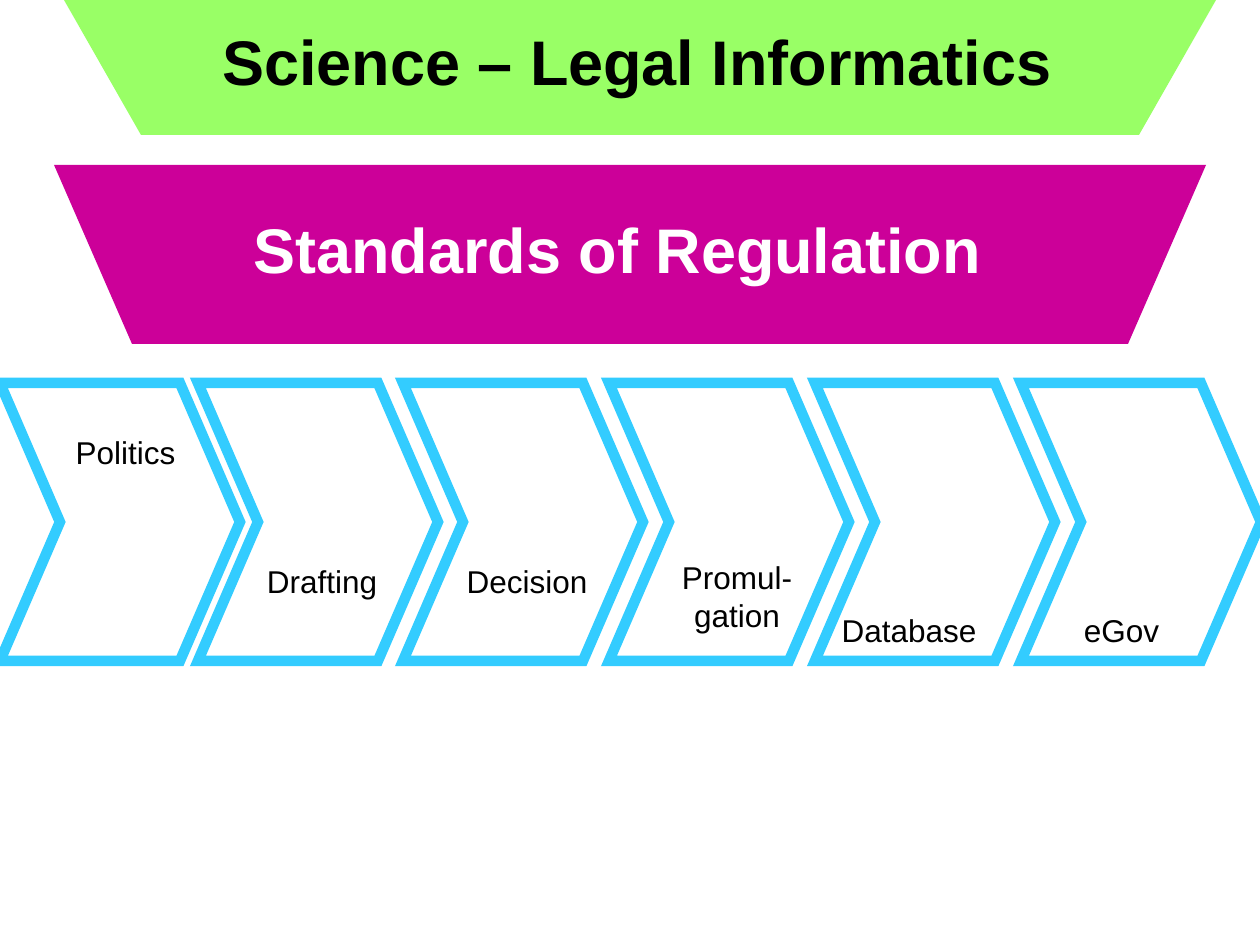
import pptx
import pptx.util
import pptx.dml.color
import pptx.enum.shapes
import pptx.enum.text
import pptx.oxml
import pptx.oxml.ns

SCALE = 914400 / 126
THEME = {
    "font": "Arial",
    "science": "99FF66",
    "standards": "CC0099",
    "chevron": "33CCFF",
    "dark": "000000",
    "light": "FFFFFF",
    "heading": 36,
    "label": 18,
    "outline": 6,
}


def emu(*lengths):
    return [pptx.util.Emu(round(length * SCALE)) for length in lengths]


def add_text(page, lines, bounds, size, color, bold=False):
    box = page.shapes.add_textbox(*emu(*bounds))
    frame = box.text_frame
    frame.word_wrap = False
    frame.auto_size = pptx.enum.text.MSO_AUTO_SIZE.SHAPE_TO_FIT_TEXT
    frame.text = "\n".join(lines)
    for para in frame.paragraphs:
        para.alignment = pptx.enum.text.PP_ALIGN.CENTER
        para.font.name = THEME["font"]
        para.font.size = pptx.util.Pt(THEME[size])
        para.font.bold = bold
        para.font.color.rgb = pptx.dml.color.RGBColor.from_string(THEME[color])


deck = pptx.Presentation()
deck.slide_width, deck.slide_height = emu(1260, 945)
page = deck.slides.add_slide(deck.slide_layouts[6])

banners = [
    ("Standards of Regulation", "standards", "light",
     [(54, 165), (132, 344), (1128, 344), (1206, 165)], (239, 204, 757, 88)),
    ("Science – Legal Informatics", "science", "dark",
     [(64, 0), (141, 135), (1139, 135), (1216, 0)], (206, 16, 862, 88)),
]
for title, fill, color, corners, bounds in banners:
    builder = page.shapes.build_freeform(*corners[0], scale=SCALE)
    builder.add_line_segments(corners[1:], close=True)
    banner = builder.convert_to_shape()
    banner.shadow.inherit = False
    banner.fill.solid()
    banner.fill.fore_color.rgb = pptx.dml.color.RGBColor.from_string(THEME[fill])
    banner.line.fill.background()
    add_text(page, [title], bounds, "heading", color, bold=True)

lefts = [0] + [198 + 823 * step // 4 for step in range(5)]
for left in lefts:
    chevron = page.shapes.add_shape(
        pptx.enum.shapes.MSO_SHAPE.CHEVRON, *emu(left, 383, 240, 278))
    chevron.adjustments[0] = 0.25
    chevron.shadow.inherit = False
    chevron.fill.background()
    chevron.line.width = pptx.util.Pt(THEME["outline"])
    chevron.line.color.rgb = pptx.dml.color.RGBColor.from_string(THEME["chevron"])
    outline = chevron.line._get_or_add_ln()
    outline.append(pptx.oxml.parse_xml(
        f'<a:miter {pptx.oxml.ns.nsdecls("a")} lim="800000"/>'))

labels = [
    (["Politics"], (63, 427, 125, 50)),
    (["Drafting"], (254, 556, 136, 50)),
    (["Decision"], (454, 556, 146, 50)),
    (["Promul-", "gation"], (669, 552, 136, 88)),
    (["Database"], (829, 605, 160, 50)),
    (["eGov"], (1071, 605, 101, 50)),
]
for lines, bounds in labels:
    add_text(page, lines, bounds, "label", "dark")

deck.save("out.pptx")
